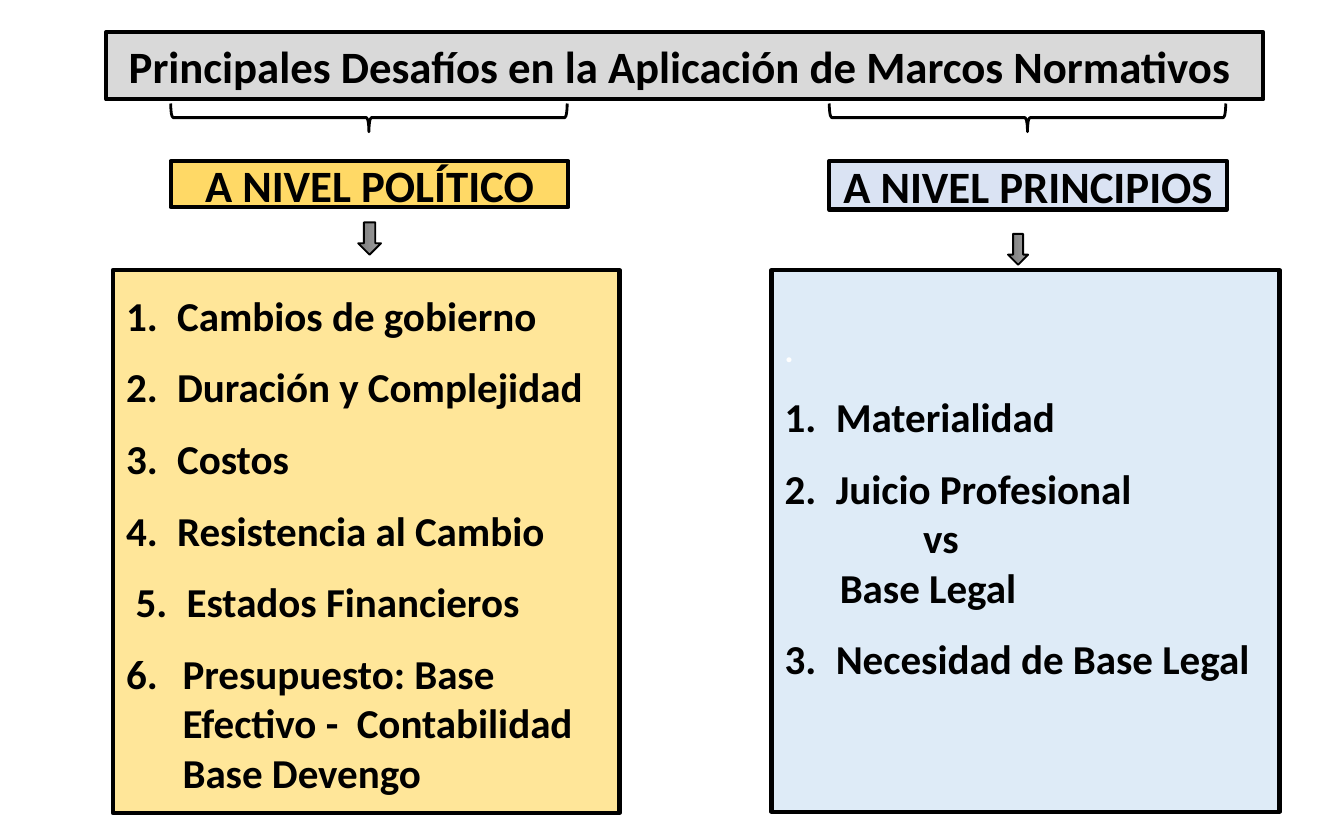
from lxml import etree
from pptx import Presentation
from pptx.dml.color import RGBColor
from pptx.enum.shapes import MSO_SHAPE
from pptx.enum.text import MSO_ANCHOR, PP_ALIGN
from pptx.oxml.ns import qn
from pptx.util import Inches, Pt

RECTANGLE = MSO_SHAPE.RECTANGLE
LEFT_BRACE = MSO_SHAPE.LEFT_BRACE
RIGHT_ARROW = MSO_SHAPE.RIGHT_ARROW
TOP, MIDDLE = MSO_ANCHOR.TOP, MSO_ANCHOR.MIDDLE
LEFT, CENTER = PP_ALIGN.LEFT, PP_ALIGN.CENTER

WIDTH, HEIGHT = Inches(10), Inches(6.25)
COLUMN, ROW = WIDTH / 100, HEIGHT / 100
FONT = "Calibri"
BLACK, WHITE = "000000", "FFFFFF"
HANG = 0.38


def color(value):
    """Turn a hex string into a colour."""
    return RGBColor.from_string(value)


def add_box(slide, kind, box, line_width, fill=None, turn=0):
    """Add an outlined shape that covers a grid box after its turn."""
    left, top, width, height = box
    x, y, w, h = left * COLUMN, top * ROW, width * COLUMN, height * ROW
    if turn:
        x, y, w, h = x + (w - h) / 2, y + (h - w) / 2, h, w
    shape = slide.shapes.add_shape(kind, *(round(n) for n in (x, y, w, h)))
    shape.rotation = turn
    shape.shadow.inherit = False
    shape.line.color.rgb = color(BLACK)
    shape.line.width = Pt(line_width)
    if fill:
        shape.fill.solid()
        shape.fill.fore_color.rgb = color(fill)
    else:
        shape.fill.background()
    return shape


def write(paragraph, text, size=22, ink=BLACK, align=LEFT, after=0, number=None, margin=0, hang=0):
    """Write one bold paragraph, numbered if a number is given."""
    properties = paragraph._p.get_or_add_pPr()
    properties.set("marL", str(Inches(margin)))
    properties.set("indent", str(-Inches(hang)))
    if number:
        bullet_font = etree.SubElement(properties, qn("a:buFont"))
        bullet_font.set("typeface", "+mj-lt")
        bullet = etree.SubElement(properties, qn("a:buAutoNum"))
        bullet.set("type", "arabicPeriod")
        bullet.set("startAt", str(number))
    paragraph.alignment = align
    paragraph.space_after = Pt(after)
    run = paragraph.add_run()
    run.text = text
    run.font.name = FONT
    run.font.size = Pt(size)
    run.font.bold = True
    run.font.color.rgb = color(ink)


def add_label(slide, box, text, fill):
    """Add a filled box with one centred line."""
    shape = add_box(slide, RECTANGLE, box, 2.25, fill)
    frame = shape.text_frame
    frame.word_wrap = True
    frame.vertical_anchor = MIDDLE
    frame.margin_left = frame.margin_right = 0
    write(frame.paragraphs[0], text, size=24, align=CENTER)


def add_arrow(slide, box):
    """Add a grey gradient arrow that points down."""
    arrow = add_box(slide, RIGHT_ARROW, box, 1, turn=90)
    arrow.fill.gradient()
    arrow.fill.gradient_angle = 270
    for stop, position, shade in zip(arrow.fill.gradient_stops, (0, 1), ("9D9D9D", "7C7C7C")):
        stop.position = position
        stop.color.rgb = color(shade)


def add_panel(slide, box, fill, margin_top, items):
    """Add a filled panel with a list of paragraphs."""
    shape = add_box(slide, RECTANGLE, box, 2.25, fill)
    frame = shape.text_frame
    frame.word_wrap = True
    frame.vertical_anchor = TOP
    frame.margin_top = Inches(margin_top)
    for index, (text, style) in enumerate(items):
        paragraph = frame.add_paragraph() if index else frame.paragraphs[0]
        write(paragraph, text, **style)


def add_level(slide, box, heading, heading_height, arrow, fills, margin_top, items):
    """Add one column: brace, heading, arrow and panel."""
    left, top, width, height = box
    inner = left + 4.3
    arrow_left, arrow_top, arrow_width, arrow_height = arrow
    heading_fill, panel_fill = fills
    panel_offset = 20.32
    panel = (left, top + panel_offset, width, height - panel_offset)
    add_panel(slide, panel, panel_fill, margin_top, items)
    add_label(slide, (inner, top + 7.36, 29.6, heading_height), heading, heading_fill)
    add_arrow(slide, (left + arrow_left, top + arrow_top, arrow_width, arrow_height))
    add_box(slide, LEFT_BRACE, (inner, top + 0.48, 29.5, 3.36), 1.5, turn=270)


def numbered(number, text, margin=HANG, hang=HANG, after=12):
    """Describe one numbered paragraph."""
    return text, dict(number=number, margin=margin, hang=hang, after=after)


def main():
    """Build and save the slide."""
    presentation = Presentation()
    presentation.slide_width, presentation.slide_height = WIDTH, HEIGHT
    slide = presentation.slides.add_slide(presentation.slide_layouts[6])

    title = "Principales Desafíos en la Aplicación de Marcos Normativos "
    add_label(slide, (7.9, 3.84, 86.1, 8), title, "D9D9D9")

    political = [
        numbered(1, "Cambios de gobierno"),
        numbered(2, "Duración y Complejidad"),
        numbered(3, "Costos"),
        numbered(4, "Resistencia al Cambio"),
        numbered(5, "Estados Financieros", margin=0.45),
        numbered(6, "Presupuesto: Base Efectivo -  Contabilidad Base Devengo",
                 margin=0.42, hang=0.42),
    ]
    principles = [
        (".", dict(size=18, ink=WHITE, after=12)),
        numbered(1, "Materialidad"),
        numbered(2, "Juicio Profesional", after=0),
        ("vs", dict(margin=1.03)),
        ("Base Legal", dict(margin=0.41, after=12)),
        numbered(3, "Necesidad de Base Legal"),
    ]
    add_level(slide, (8.4, 11.84, 37.7, 84.96), "A NIVEL POLÍTICO", 5.44,
              (18.25, 14.64, 1.7, 3.84), ("FFD966", "FFE699"), 0.15, political)
    add_level(slide, (57.4, 11.84, 37.8, 84.8), "A NIVEL PRINCIPIOS", 5.76,
              (17.6, 16, 1.5, 3.68), ("DAE3F3", "DEEBF7"), 0.44, principles)

    presentation.save("out.pptx")


if __name__ == "__main__":
    main()
